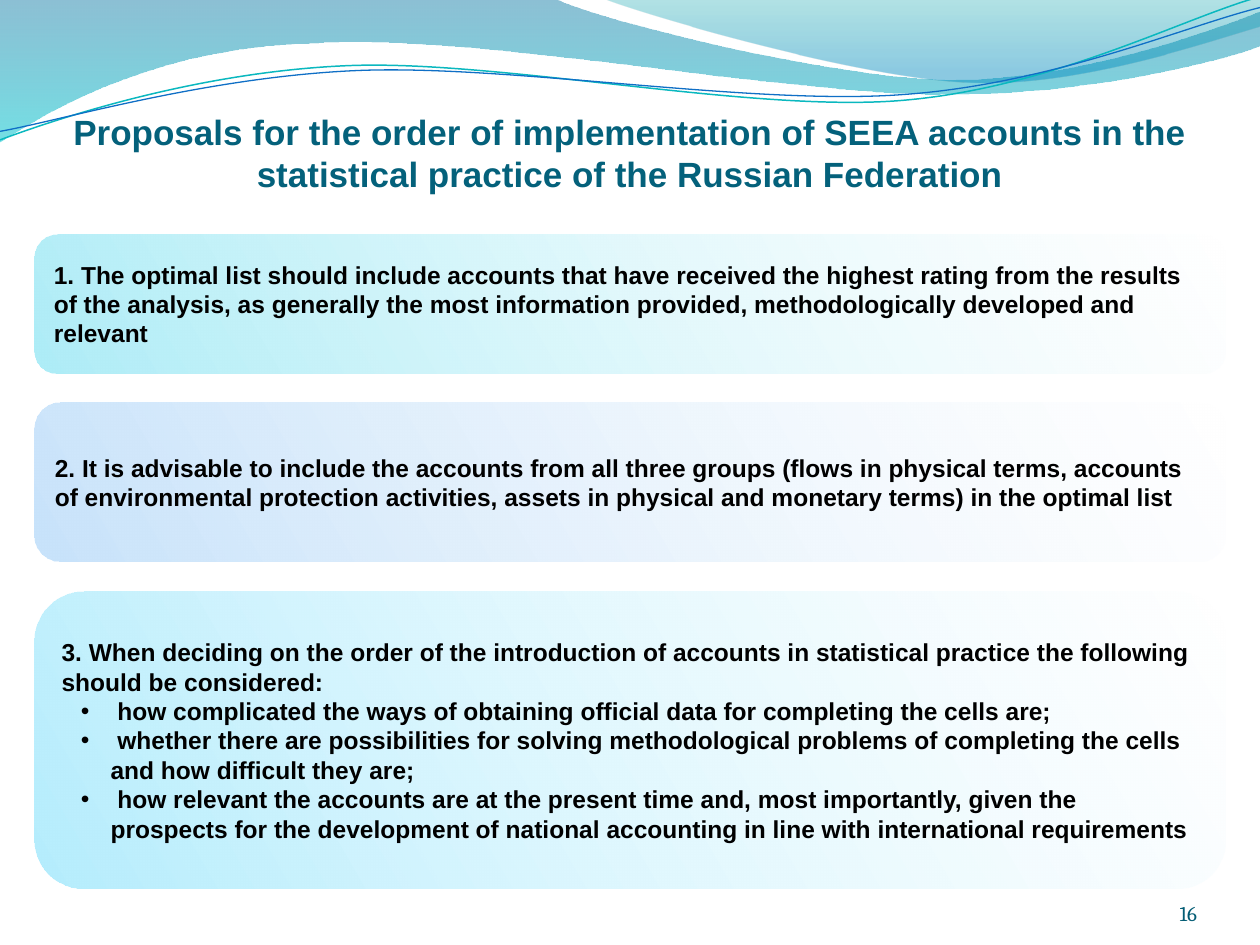
from lxml.etree import SubElement
from pptx import Presentation
from pptx.dml.color import RGBColor
from pptx.enum.shapes import MSO_SHAPE as Shape
from pptx.enum.text import MSO_ANCHOR as Anchor, PP_ALIGN as Align
from pptx.oxml.ns import qn
from pptx.util import Pt

WHITE = RGBColor(0xFF, 0xFF, 0xFF)
BLACK = RGBColor(0, 0, 0)
TITLE = RGBColor(0x04, 0x61, 0x7B)
NUMBER = RGBColor(0x04, 0x5D, 0x75)
DEEP = RGBColor(0x00, 0x74, 0xA1)
AQUA = RGBColor(0x00, 0xC6, 0xCF)
SEA = RGBColor(0x00, 0xA1, 0xA9)
SKY = RGBColor(0x00, 0x8B, 0xBF)
TEAL = RGBColor(0x0A, 0xB8, 0xBF)
BLUE = RGBColor(0x0F, 0x6F, 0xC6)
MINT = RGBColor(0xAE, 0xED, 0xF7)
PALE = RGBColor(0xC8, 0xE3, 0xFB)
ICE = RGBColor(0xB5, 0xED, 0xFD)

WIDE, HIGH = 720, 540
TILT = 357.3

# Each part is one point (a line) or three points (a cubic curve).
BAND = [
    [(-0.7, 0)], [(317, -0.7)],
    [(343, 12), (478, 45.4), (546, 45.4)],
    [(614, 45.4), (690, 18.7), (720, 6.5)],
    [(720.7, 26)],
    [(708, 31.7), (626, 54.7), (537, 54)],
    [(448, 54), (275, 20), (185, 24.5)],
    [(93, 26), (33, 60), (-0.7, 81.4)],
]
VEIL = [
    [(345, -0.7)],
    [(366, 8), (491, 44.6), (554, 46.8)],
    [(616, 49.7), (692, 23), (720, 15)],
    [(720, 0)],
]
UPPER = [
    [(-1.4, 63)],
    [(33.8, 51.7), (114.3, 29.4), (199.4, 30)],
    [(284.4, 30.5), (425.8, 67.2), (512, 64.8)],
    [(599.2, 62.3), (676.1, 25.7), (720.2, 15.5)],
]
LOWER = [
    [(-1.1, 58.1)],
    [(33.2, 53.7), (118.2, 32.6), (204.3, 33)],
    [(290.4, 33.4), (429.1, 63.8), (515.3, 61.4)],
    [(601.4, 59.4), (677.9, 29.9), (721.4, 21.3)],
]

CARDS = [
    (79.2, MINT, "1. The optimal list should include accounts that have received the "
     "highest rating from the results of the analysis, as generally the most "
     "information provided, methodologically developed and relevant", []),
    (90.7, PALE, "2. It is advisable to include the accounts from all three groups "
     "(flows in physical terms, accounts of environmental protection activities, "
     "assets in physical and monetary terms) in the optimal list", []),
    (170, ICE, "3. When deciding on the order of the introduction of accounts in "
     "statistical practice the following should be considered:", [
         " how complicated the ways of obtaining official data for completing the "
         "cells are;",
         " whether there are possibilities for solving methodological problems of "
         "completing the cells and how difficult they are;",
         " how relevant the accounts are at the present time and, most importantly, "
         "given the prospects for the development of national accounting in line "
         "with international requirements"]),
]


def draw(slide, parts, close):
    """Build a freeform, then turn each three-point part into a cubic curve."""
    dots = [(Pt(x), Pt(y)) for part in parts for x, y in part]
    pen = slide.shapes.build_freeform(*dots[0])
    pen.add_line_segments(dots[1:], close=close)
    shape = pen.convert_to_shape()
    shape.shadow.inherit = False
    lines = iter(list(shape._element.iter(qn("a:lnTo"))))
    for part in parts[1:]:
        group = [next(lines) for _ in part]
        if len(group) == 3:
            curve = group[0].makeelement(qn("a:cubicBezTo"), {})
            group[0].addprevious(curve)
            for line in group:
                curve.append(line[0])
                line.getparent().remove(line)
    return shape


def blend(shape, stops, angle):
    """Fill with (position, colour, opacity) stops, angle clockwise."""
    shape.line.fill.background()
    shape.fill.gradient()
    grad = shape.fill._fill._gradFill
    for kid in list(grad):
        grad.remove(kid)
    row = SubElement(grad, qn("a:gsLst"))
    for pos, color, alpha in stops:
        stop = SubElement(row, qn("a:gs"), pos=str(pos * 1000))
        tint = SubElement(stop, qn("a:srgbClr"), val=str(color))
        if alpha < 100:
            SubElement(tint, qn("a:alpha"), val=str(alpha * 1000))
    SubElement(grad, qn("a:lin"), ang=str(angle * 60000), scaled="0")


def style(para, name, size, color, bold=False, align=Align.LEFT):
    para.alignment = align
    font = para.font
    font.name, font.size, font.bold = name, Pt(size), bold
    font.color.rgb = color


def bullet(para):
    props = para._p.get_or_add_pPr()
    props.set("marL", str(Pt(28)))
    props.set("indent", str(Pt(-17)))
    SubElement(props, qn("a:buFont"), typeface="Arial")
    SubElement(props, qn("a:buChar"), char="•")
    # The default run properties must follow the bullet.
    props.append(props.find(qn("a:defRPr")))


def waves(slide):
    blend(draw(slide, BAND, True), [(0, DEEP, 45), (100, AQUA, 55)], 90)
    blend(draw(slide, VEIL, True), [(0, SEA, 30), (80, SKY, 45)], 90)
    for parts, color, width in ((UPPER, TEAL, 0.85), (LOWER, BLUE, 0.75)):
        curve = draw(slide, parts, False)
        curve.rotation = TILT
        curve.fill.background()
        curve.line.color.rgb = color
        curve.line.width = Pt(width)


def label(slide, box, text, top=0):
    """Add a bottom-anchored text box and return its paragraph."""
    frame = slide.shapes.add_textbox(*map(Pt, box)).text_frame
    frame.word_wrap = True
    frame.vertical_anchor = Anchor.BOTTOM
    frame.margin_left = frame.margin_right = frame.margin_bottom = 0
    frame.margin_top = Pt(top)
    para = frame.paragraphs[0]
    para.text = text
    return para


def card(slide, box, color, lead, points):
    shape = slide.shapes.add_shape(Shape.ROUNDED_RECTANGLE, *map(Pt, box))
    shape.shadow.inherit = False
    blend(shape, [(0, WHITE, 50), (100, color, 100)], 150)
    frame = shape.text_frame
    frame.word_wrap = True
    frame.vertical_anchor = Anchor.MIDDLE
    for i, text in enumerate([lead, *points]):
        para = frame.add_paragraph() if i else frame.paragraphs[0]
        para.text = text
        style(para, "Arial", 14, BLACK, True)
        if i:
            bullet(para)


def cards(slide, left, top, width, gap):
    for high, color, lead, points in CARDS:
        card(slide, (left, top, width, high), color, lead, points)
        top += high + gap


def main():
    deck = Presentation()
    deck.slide_width, deck.slide_height = Pt(WIDE), Pt(HIGH)
    slide = deck.slides.add_slide(deck.slide_layouts[6])
    waves(slide)
    number = label(slide, (624, 500.4, 60, 28.8), "16")
    style(number, "Cambria", 12, NUMBER, align=Align.RIGHT)
    title = label(slide, (33, 48.6, 654, 62.6),
                  "Proposals for the order of implementation of SEEA accounts in "
                  "the statistical practice of the Russian Federation", 3.6)
    style(title, "Arial", 20, TITLE, True, Align.CENTER)
    cards(slide, 19.8, 134, 680.4, 17)
    deck.save("out.pptx")


if __name__ == "__main__":
    main()
